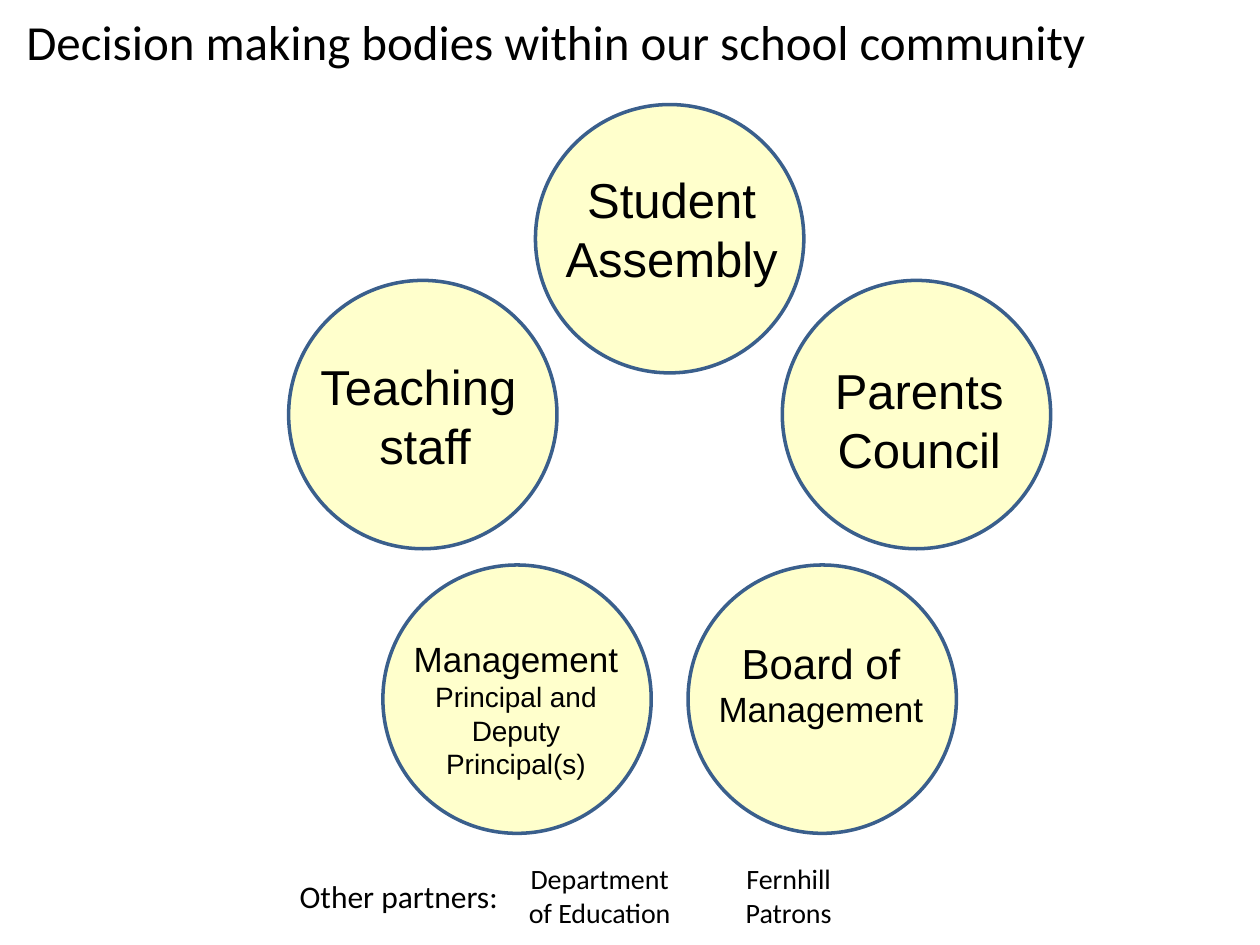
"""Build a slide showing a school's decision making bodies as a ring of circles."""
from dataclasses import dataclass
from math import cos, radians, sin

from pptx import Presentation
from pptx.dml.color import RGBColor
from pptx.enum.shapes import MSO_SHAPE
from pptx.enum.text import MSO_ANCHOR, MSO_AUTO_SIZE, PP_ALIGN
from pptx.util import Inches, Pt

ELLIPSE = MSO_SHAPE.OVAL
TOP = MSO_ANCHOR.TOP
GROW = MSO_AUTO_SIZE.SHAPE_TO_FIT_TEXT
LEFT, CENTER = PP_ALIGN.LEFT, PP_ALIGN.CENTER
TITLE_ONLY = 5

W, H = Inches(10), Inches(7.5)
COL, ROW = W / 100, H / 75


@dataclass(frozen=True)
class Theme:
    fill: RGBColor = RGBColor(0xFF, 0xFF, 0xCC)
    line: RGBColor = RGBColor(0x3A, 0x5F, 0x8C)
    ink: RGBColor = RGBColor(0, 0, 0)
    line_width: float = 2
    body_font: str = "Arial"
    note_font: str = "Calibri"
    big: int = 28
    medium: int = 24
    small: int = 20
    label: int = 18
    detail: int = 16


@dataclass(frozen=True)
class Box:
    col: float
    row: float
    cols: float
    rows: float

    def place(self) -> tuple[int, int, int, int]:
        return (round(self.col * COL), round(self.row * ROW),
                round(self.cols * COL), round(self.rows * ROW))


@dataclass(frozen=True)
class Ring:
    col: float
    row: float
    col_radius: float
    row_radius: float
    size: float
    count: int

    def boxes(self) -> list[Box]:
        angles = [radians(360 * i / self.count) for i in range(self.count)]
        return [Box(self.col + self.col_radius * sin(a) - self.size / 2,
                    self.row - self.row_radius * cos(a) - self.size / 2,
                    self.size, self.size) for a in angles]


@dataclass(frozen=True)
class Label:
    box: Box
    paragraphs: list[list[tuple[str, int]]]
    font: str
    align: PP_ALIGN = CENTER


T = Theme()
RING = Ring(53.15, 39.15, 20.6, 20.2, 21.3, 5)
TITLE = Label(Box(1.1, 0.4, 97.2, 5.7),
              [[("Decision making bodies within our school community", T.big)]],
              T.note_font, LEFT)
LABELS = [
    Label(Box(43.8, 13, 19, 10.4), [[("Student Assembly", T.big)]], T.body_font),
    Label(Box(24.2, 27.8, 18, 10.4),
          [[("Teaching", T.big)], [(" staff", T.big)]], T.body_font),
    Label(Box(64.2, 28.1, 17.5, 10.4), [[("Parents Council", T.big)]], T.body_font),
    Label(Box(31.2, 50.1, 19.5, 12.5),
          [[("Management ", T.small),
            ("Principal and Deputy Principal(s)", T.detail)]], T.body_font),
    Label(Box(55.7, 50.1, 18.9, 8.4),
          [[("Board of ", T.medium), ("Management", T.small)]], T.body_font),
    Label(Box(40.1, 67.9, 15, 6.4),
          [[("Department of Education", T.detail)]], T.note_font),
    Label(Box(55.1, 67.9, 15, 6.4), [[("Fernhill Patrons", T.detail)]], T.note_font),
    Label(Box(22.8, 69.1, 20.1, 4),
          [[("Other partners:", T.label)]], T.note_font, LEFT),
]


def write(tf, paragraphs: list[list[tuple[str, int]]], *, font: str,
          align: PP_ALIGN, color: RGBColor = T.ink) -> None:
    tf.word_wrap = True
    tf.auto_size = GROW
    tf.vertical_anchor = TOP
    for i, runs in enumerate(paragraphs):
        p = tf.add_paragraph() if i else tf.paragraphs[0]
        p.alignment = align
        for text, size in runs:
            r = p.add_run()
            r.text = text
            r.font.name = font
            r.font.size = Pt(size)
            r.font.color.rgb = color


def add_circle(slide, box: Box) -> None:
    sp = slide.shapes.add_shape(ELLIPSE, *box.place())
    sp.shadow.inherit = False
    sp.fill.solid()
    sp.fill.fore_color.rgb = T.fill
    sp.line.color.rgb = T.line
    sp.line.width = Pt(T.line_width)


def add_label(slide, label: Label) -> None:
    sp = slide.shapes.add_textbox(*label.box.place())
    write(sp.text_frame, label.paragraphs, font=label.font, align=label.align)


def set_title(slide, label: Label) -> None:
    sp = slide.shapes.title
    sp.left, sp.top, sp.width, sp.height = label.box.place()
    write(sp.text_frame, label.paragraphs, font=label.font, align=label.align)


def main() -> None:
    prs = Presentation()
    prs.slide_width, prs.slide_height = W, H
    slide = prs.slides.add_slide(prs.slide_layouts[TITLE_ONLY])
    set_title(slide, TITLE)
    for box in RING.boxes():
        add_circle(slide, box)
    for label in LABELS:
        add_label(slide, label)
    prs.save("out.pptx")


if __name__ == "__main__":
    main()
